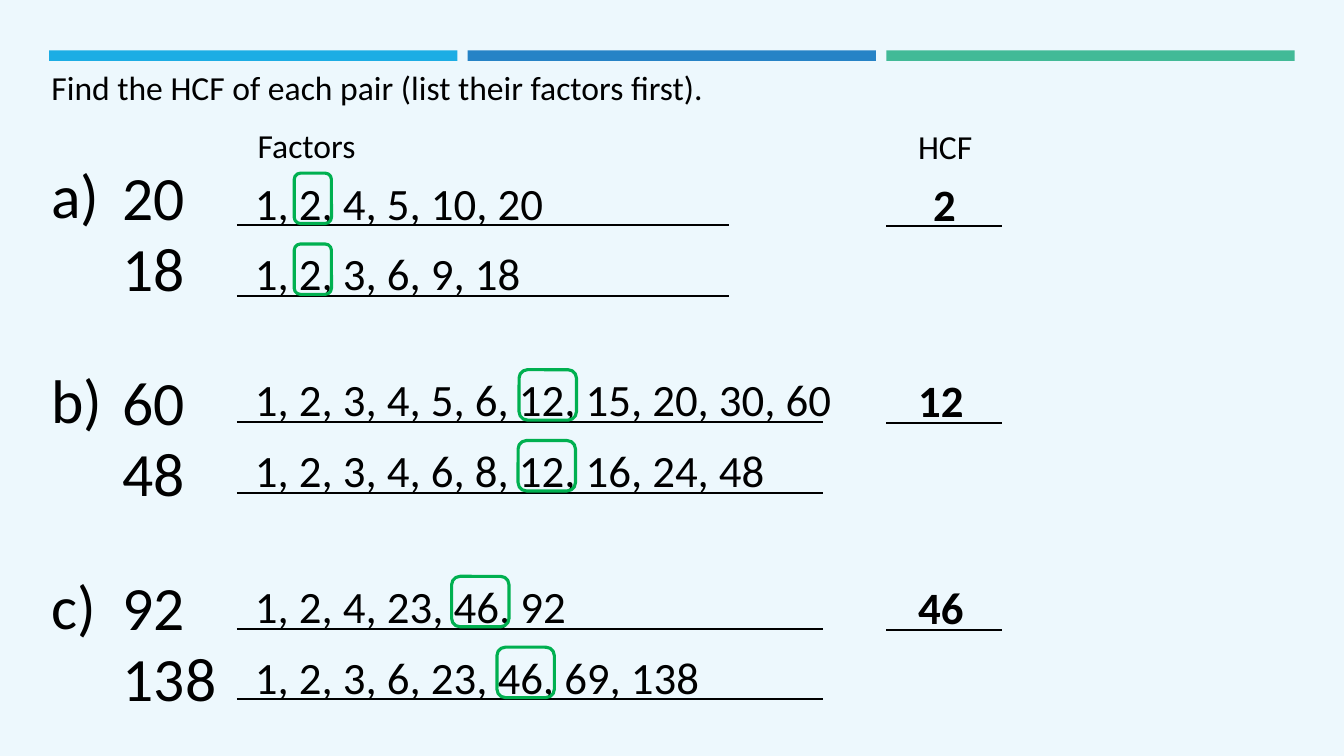
from collections import namedtuple

from lxml.etree import SubElement
from pptx import Presentation
from pptx.dml.color import RGBColor
from pptx.enum.shapes import MSO_CONNECTOR as Connector, MSO_SHAPE as Preset
from pptx.enum.text import MSO_ANCHOR as Anchor, MSO_AUTO_SIZE as AutoSize, PP_ALIGN as Align
from pptx.oxml.ns import qn
from pptx.util import Pt

FONT = "Calibri"
BLACK, GREEN = "000000", "00B050"
ROW_STEP = 50.6
LABEL_LEFT, NUMBER_LEFT, FACTORS_LEFT = 29.5, 80.6, 175
RULE_LEFT, HCF_RULE_LEFT, HCF_RULE_RIGHT = 169.2, 633, 715.7

# Each row is a number, its factors and the left edge of the ring round the HCF
Question = namedtuple(
    "Question", "label number_top factors_top rule_right ring_width hcf hcf_left rows")
QUESTIONS = [
    Question("a)", 110.2, 121.7, 520.6, 26.6, "2", 659.5, [
        ("20", "1, 2, 4, 5, 10, 20", 210.2),
        ("18", "1, 2, 3, 6, 9, 18", 210.2)]),
    Question("b)", 256.3, 262.1, 588.2, 41, "12", 648.7, [
        ("60", "1, 2, 3, 4, 5, 6, 12, 15, 20, 30, 60", 370.8),
        ("48", "1, 2, 3, 4, 6, 8, 12, 16, 24, 48", 370.1)]),
    Question("c)", 403.2, 409.7, 588.2, 41, "46", 648.7, [
        ("92", "1, 2, 4, 23, 46, 92", 322.6),
        ("138", "1, 2, 3, 6, 23, 46, 69, 138", 355)]),
]


def color(value):
    return RGBColor.from_string(value)


def place(box, left, top, width, height):
    box.left, box.top, box.width, box.height = Pt(left), Pt(top), Pt(width), Pt(height)


def write(box, text, size, bold=False):
    frame = box.text_frame
    frame.text = text
    frame.word_wrap = True
    frame.auto_size = AutoSize.NONE
    frame.vertical_anchor = Anchor.TOP
    para = frame.paragraphs[0]
    para.alignment = Align.LEFT
    span = para.runs[0]
    span.font.name = FONT
    span.font.size = Pt(size)
    span.font.bold = bold
    span.font.color.rgb = color(BLACK)


def add_text(page, text, left, top, width, height, size, bold=False):
    box = page.shapes.add_textbox(Pt(left), Pt(top), Pt(width), Pt(height))
    write(box, text, size, bold)


def add_bar(page, left, fill):
    bar = page.shapes.add_shape(Preset.RECTANGLE, Pt(left), Pt(36), Pt(291.6), Pt(7.5))
    bar.shadow.inherit = False
    bar.fill.solid()
    bar.fill.fore_color.rgb = color(fill)
    bar.line.fill.background()


def add_rule(page, left, right, top):
    rule = page.shapes.add_connector(
        Connector.STRAIGHT, Pt(left), Pt(top), Pt(right), Pt(top))
    rule.line.color.rgb = color(BLACK)
    rule.line.width = Pt(1.5)
    SubElement(rule.element.spPr, qn("a:effectLst"))


def add_ring(page, left, top, width):
    ring = page.shapes.add_shape(
        Preset.ROUNDED_RECTANGLE, Pt(left), Pt(top), Pt(width), Pt(36))
    ring.shadow.inherit = False
    ring.fill.background()
    ring.line.color.rgb = color(GREEN)
    ring.line.width = Pt(2.25)


def add_question(page, question):
    add_text(page, question.label, LABEL_LEFT, question.number_top - 1.4, 62, 67.7, 44)
    for index, (number, factors, ring_left) in enumerate(question.rows):
        shift = index * ROW_STEP
        top = question.factors_top + shift
        add_text(page, number, NUMBER_LEFT, question.number_top + shift, 104, 67.7, 44)
        add_text(page, factors, FACTORS_LEFT, top, 433, 51.8, 32)
        add_rule(page, RULE_LEFT, question.rule_right, top + 39.3)
        add_ring(page, ring_left, top + 2, question.ring_width)
    top = question.factors_top
    add_text(page, question.hcf, question.hcf_left, top + 0.8, 76, 51.8, 32, bold=True)
    add_rule(page, HCF_RULE_LEFT, HCF_RULE_RIGHT, top + 40)


def main():
    deck = Presentation()
    deck.slide_width, deck.slide_height = Pt(960), Pt(540)
    page = deck.slides.add_slide(deck.slide_layouts[5])
    page.background.fill.solid()
    page.background.fill.fore_color.rgb = color("EDF8FD")

    # Coloured band along the top
    for index, fill in enumerate(["1CADE4", "2683C6", "42BA97"]):
        add_bar(page, 35.1 + index * 299, fill)

    # Title and column headings
    title = page.shapes.title
    place(title, LABEL_LEFT, 44, 826.6, 36)
    write(title, "Find the HCF of each pair (list their factors first).", 24)
    add_text(page, "Factors", 177, 85.7, 112.3, 36, 24)
    add_text(page, "HCF", 648.7, 86.4, 112.3, 36, 24)

    # Questions with their answers
    for question in QUESTIONS:
        add_question(page, question)

    deck.save("out.pptx")


if __name__ == "__main__":
    main()
